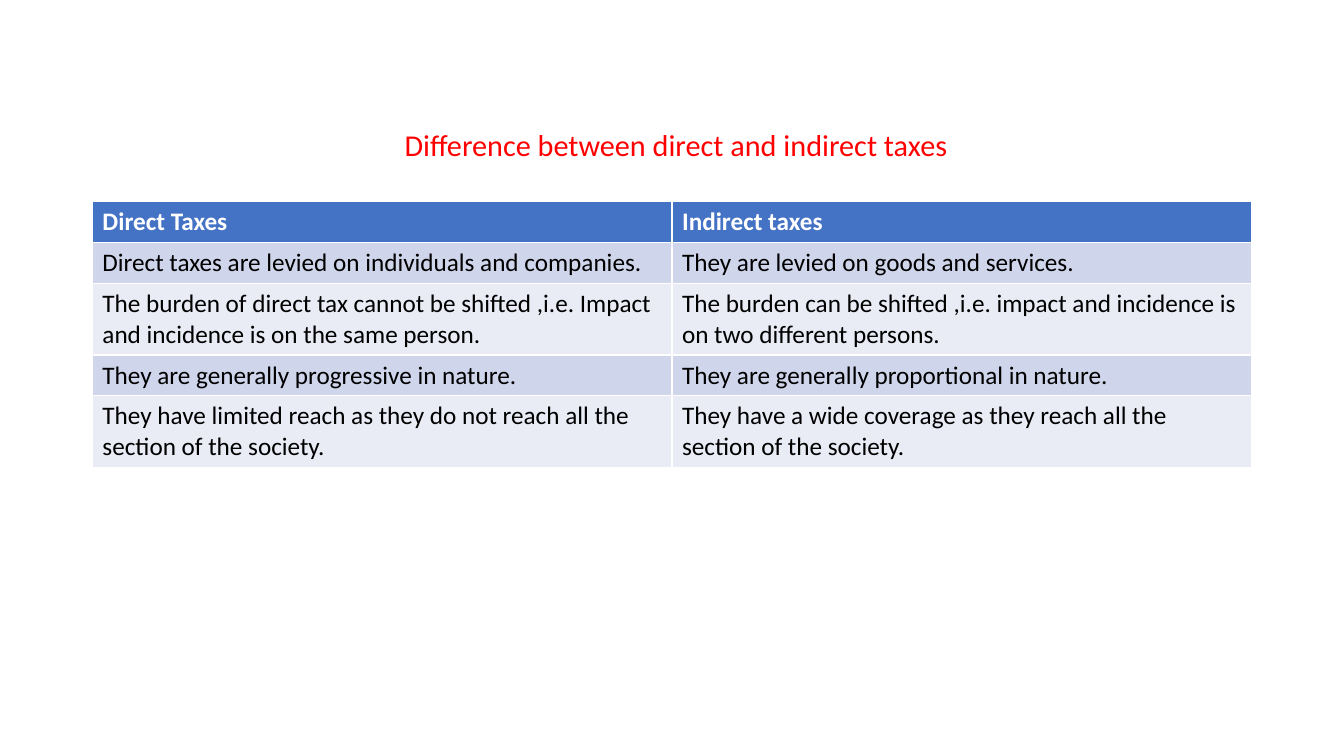
from dataclasses import dataclass

from pptx import Presentation
from pptx.dml.color import RGBColor
from pptx.enum import text
from pptx.util import Pt


@dataclass(frozen=True)
class Theme:
    font: str = "Calibri"
    title_size: float = 21.6
    table_size: float = 18
    title: str = "FF0000"
    header_text: str = "FFFFFF"
    body_text: str = "000000"
    header_fill: str = "4472C4"
    bands: tuple = ("CFD5EA", "E9EBF5")


THEME = Theme()
LEFT, WIDTH = Pt(66), Pt(828)
TITLE_ONLY = 5

COMPARISON = [
    ("Direct Taxes", "Indirect taxes"),
    ("Direct taxes are levied on individuals and companies.",
     "They are levied on goods and services."),
    ("The burden of direct tax cannot be shifted ,i.e. Impact and incidence is on the same person.",
     "The burden can be shifted ,i.e. impact and incidence is on two different persons."),
    ("They are generally progressive in nature.",
     "They are generally proportional in nature."),
    ("They have limited reach as they do not reach all the section of the society.",
     "They have a wide coverage as they reach all the section of the society."),
]


def write(frame, wording, *, size, color, bold=False, line_spacing=1.0):
    paragraph = frame.paragraphs[0]
    paragraph.alignment = text.PP_ALIGN.LEFT
    paragraph.line_spacing = line_spacing
    run = paragraph.add_run()
    run.text = wording
    run.font.name = THEME.font
    run.font.size = Pt(size)
    run.font.bold = bold
    run.font.color.rgb = RGBColor.from_string(color)


def set_title(slide, wording):
    """Place the title by insets, so that it sits low and indented in its box."""
    title = slide.shapes.title
    title.left, title.top, title.width, title.height = LEFT, Pt(28.8), WIDTH, Pt(104.4)
    frame = title.text_frame
    frame.word_wrap = True
    frame.auto_size = text.MSO_AUTO_SIZE.NONE
    frame.vertical_anchor = text.MSO_ANCHOR.BOTTOM
    frame.margin_left, frame.margin_bottom = Pt(223), Pt(17)
    write(frame, wording, size=THEME.title_size, color=THEME.title, line_spacing=0.9)


def add_comparison(slide, rows):
    row_height = Pt(29.2)
    table = slide.shapes.add_table(len(rows), len(rows[0]), LEFT, Pt(144),
                                   WIDTH, row_height * len(rows)).table
    for row_index, row in enumerate(rows):
        is_header = row_index == 0
        fill = THEME.header_fill if is_header else THEME.bands[(row_index - 1) % 2]
        color = THEME.header_text if is_header else THEME.body_text
        for column_index, wording in enumerate(row):
            cell = table.cell(row_index, column_index)
            cell.fill.solid()
            cell.fill.fore_color.rgb = RGBColor.from_string(fill)
            write(cell.text_frame, wording, size=THEME.table_size, color=color, bold=is_header)


def main():
    deck = Presentation()
    deck.slide_width, deck.slide_height = Pt(960), Pt(540)
    slide = deck.slides.add_slide(deck.slide_layouts[TITLE_ONLY])
    set_title(slide, "Difference between direct and indirect taxes")
    add_comparison(slide, COMPARISON)
    deck.save("out.pptx")


if __name__ == "__main__":
    main()
